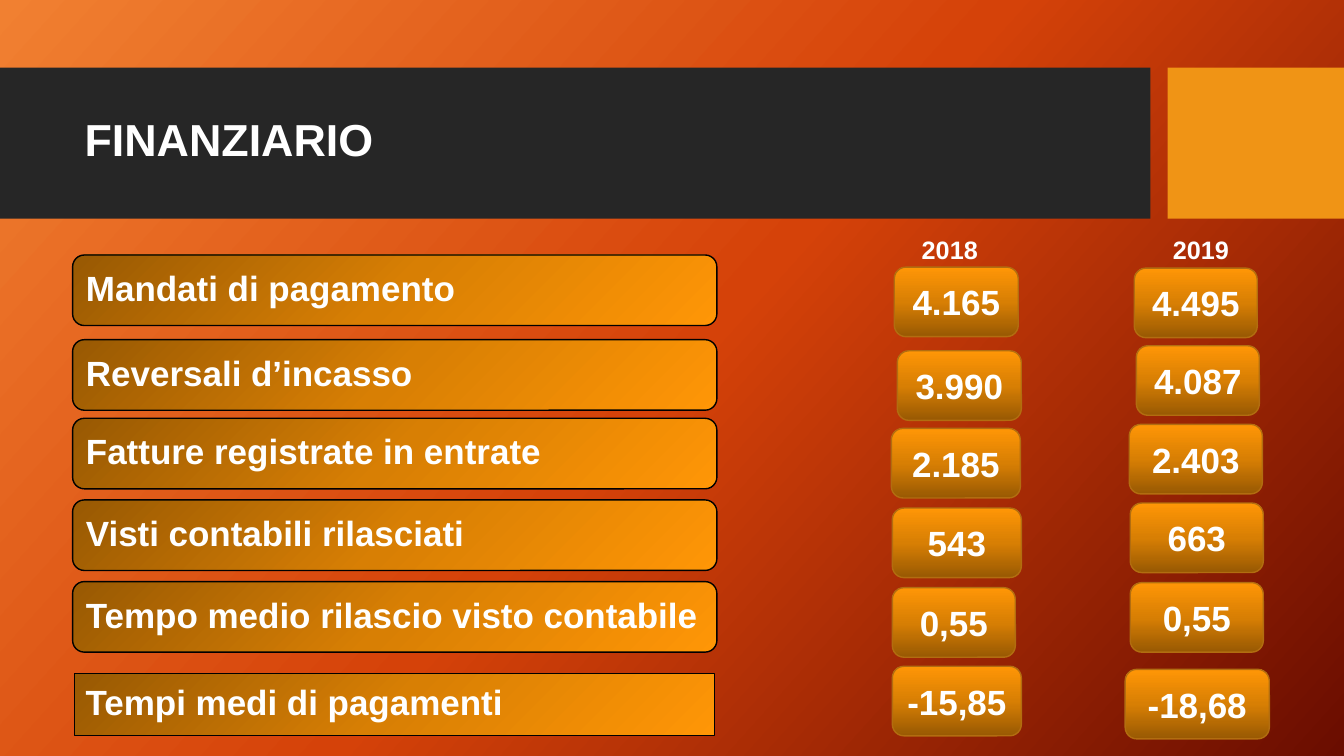
from lxml import etree
from pptx import Presentation
from pptx.dml.color import RGBColor
from pptx.enum.shapes import MSO_SHAPE
from pptx.enum.text import MSO_ANCHOR, PP_ALIGN
from pptx.oxml.ns import qn
from pptx.util import Inches, Pt

RECT, ROUNDED = MSO_SHAPE.RECTANGLE, MSO_SHAPE.ROUNDED_RECTANGLE
LEFT, CENTER = PP_ALIGN.LEFT, PP_ALIGN.CENTER
MIDDLE = MSO_ANCHOR.MIDDLE

COLORS = {
    "band": "262626", "accent": "F09415", "text": "FFFFFF",
    "label_line": "000000", "value_line": "B26D10",
}
BACKGROUND_STOPS = ["F18031", "D54209", "6A0D00"]
AMBER_STOPS = ["985903", "D87F04", "FF9606"]

WIDTH, HEIGHT = 13.33, 7.5
BAND_TOP, BAND_HEIGHT = 0.67, 1.5
LABEL_LEFT, LABEL_WIDTH, LABEL_HEIGHT = 0.72, 6.39, 0.7
VALUE_HEIGHT = 0.69
YEAR_TOP, YEAR_WIDTH, YEAR_HEIGHT = 2.27, 1.2, 0.4

# Label and its top
LABELS = [
    ("Mandati di pagamento", 2.53),
    ("Reversali d’incasso", 3.37),
    ("Fatture registrate in entrate", 4.15),
    ("Visti contabili rilasciati", 4.96),
    ("Tempo medio rilascio visto contabile", 5.77),
]
# Year, centre of its heading, and each value with left, top and width
YEARS = [
    ("2018", 9.42, [
        ("4.165", 8.87, 2.65, 1.23), ("3.990", 8.9, 3.48, 1.23),
        ("2.185", 8.84, 4.25, 1.28), ("543", 8.85, 5.04, 1.28),
        ("0,55", 8.85, 5.83, 1.22), ("-15,85", 8.85, 6.61, 1.28),
    ]),
    ("2019", 11.91, [
        ("4.495", 11.25, 2.66, 1.22), ("4.087", 11.27, 3.43, 1.22),
        ("2.403", 11.2, 4.21, 1.32), ("663", 11.21, 4.99, 1.32),
        ("0,55", 11.21, 5.78, 1.32), ("-18,68", 11.16, 6.64, 1.43),
    ]),
]


def paint(owner, fill, stops, angle=None):
    """Fill with evenly spaced stops: linear at a clockwise angle, or radial from the top left."""
    fill.gradient()
    gradient = owner.find(".//" + qn("a:gradFill"))
    for child in list(gradient):
        gradient.remove(child)
    stop_list = etree.SubElement(gradient, qn("a:gsLst"))
    for index, color in enumerate(stops):
        stop = etree.SubElement(stop_list, qn("a:gs"), pos=str(index * 50000))
        etree.SubElement(stop, qn("a:srgbClr"), val=color)
    if angle is None:
        radial = etree.SubElement(gradient, qn("a:path"), path="circle")
        etree.SubElement(radial, qn("a:fillToRect"), r="100000", b="100000")
    else:
        etree.SubElement(gradient, qn("a:lin"), ang=str(angle * 60000), scaled="0")


def add_box(kind, place, text="", size=25, align=CENTER, spacing=1.0, line=None, weight=1):
    """Add a shape, or a text box when kind is None, with one bold paragraph."""
    place = [Inches(length) for length in place]
    if kind is None:
        box = page.shapes.add_textbox(*place)
    else:
        box = page.shapes.add_shape(kind, *place)
        box.shadow.inherit = False
        if line is None:
            box.line.fill.background()
        else:
            box.line.color.rgb = RGBColor.from_string(COLORS[line])
            box.line.width = Pt(weight)
    frame = box.text_frame
    frame.word_wrap = True
    frame.vertical_anchor = MIDDLE
    para = frame.paragraphs[0]
    para.text = text
    para.alignment = align
    para.line_spacing = spacing
    para.font.name = "Arial"
    para.font.size = Pt(size)
    para.font.bold = True
    para.font.color.rgb = RGBColor.from_string(COLORS["text"])
    return box


deck = Presentation()
deck.slide_width, deck.slide_height = Inches(WIDTH), Inches(HEIGHT)
page = deck.slides.add_slide(deck.slide_layouts[6])
paint(page.background._cSld, page.background.fill, BACKGROUND_STOPS, 42)

# Title band
for color, left, width in [("band", 0, 11.41), ("accent", 11.58, 1.75)]:
    bar = add_box(RECT, (left, BAND_TOP, width, BAND_HEIGHT))
    bar.fill.solid()
    bar.fill.fore_color.rgb = RGBColor.from_string(COLORS[color])
add_box(None, (0.74, 0.82, 10.51, 1.18), "FINANZIARIO", 32, LEFT, 0.9)

# Row labels
for text, top in LABELS:
    label = add_box(ROUNDED, (LABEL_LEFT, top, LABEL_WIDTH, LABEL_HEIGHT),
                    text, align=LEFT, spacing=0.9, line="label_line")
    paint(label._element, label.fill, AMBER_STOPS)
last_label = add_box(RECT, (0.74, 6.68, 6.35, 0.62), "Tempi medi di pagamenti",
                     align=LEFT, spacing=0.9, line="label_line", weight=0.75)
last_label.text_frame.margin_left = Inches(0.11)
paint(last_label._element, last_label.fill, AMBER_STOPS)

# Year columns
for year, center, values in YEARS:
    add_box(None, (center - YEAR_WIDTH / 2, YEAR_TOP, YEAR_WIDTH, YEAR_HEIGHT), year, 18)
    for text, left, top, width in values:
        value = add_box(ROUNDED, (left, top, width, VALUE_HEIGHT), text, line="value_line")
        paint(value._element, value.fill, AMBER_STOPS, 270)

deck.save("out.pptx")
